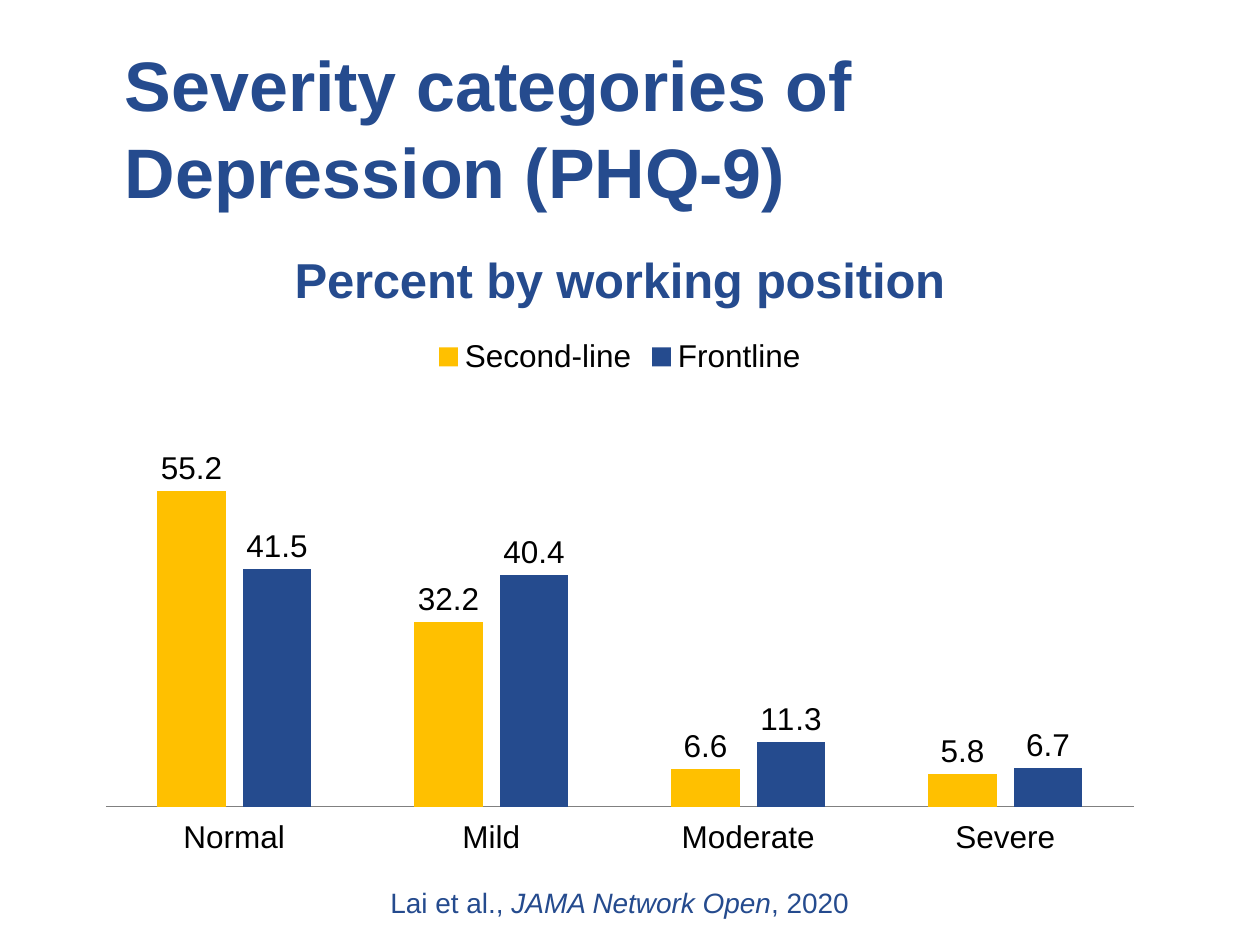
from lxml.etree import SubElement
from pptx import Presentation
from pptx.chart.data import CategoryChartData
from pptx.dml.color import RGBColor
from pptx.enum.chart import XL_CHART_TYPE, XL_LABEL_POSITION, XL_LEGEND_POSITION, XL_TICK_LABEL_POSITION, XL_TICK_MARK
from pptx.enum.text import MSO_ANCHOR, PP_ALIGN
from pptx.oxml.ns import qn
from pptx.util import Cm, Pt

# Content
HEAD = "Severity categories of Depression (PHQ-9)"
NAME = "Percent by working position"
CATS = ["Normal", "Mild", "Moderate", "Severe"]
ROWS = [
    ("Second-line", (55.2, 32.2, 6.6, 5.8), "gold"),
    ("Frontline", (41.5, 40.4, 11.3, 6.7), "blue"),
]
CITE = [("Lai et al., ", False), ("JAMA Network Open", True), (", 2020", False)]
HUES = {"blue": "254B8E", "gold": "FFC000", "black": "000000", "gray": "808080"}
PLOT = {"x": 0.02, "y": 0.02, "w": 0.96, "h": 0.88}


def hue(key):
    return RGBColor.from_string(HUES[key])


def style(font, size, key, bold=False):
    font.name, font.size, font.bold = "Arial", Pt(size), bold
    font.color.rgb = hue(key)


def place(node, box, inner=False):
    """Give a chart part a fixed place, in shares of the chart."""
    layout = node.find(qn("c:layout"))
    if layout is None:
        layout = SubElement(node, qn("c:layout"))
        node.insert(0, layout)
    spot = SubElement(layout, qn("c:manualLayout"))
    if inner:
        SubElement(spot, qn("c:layoutTarget")).set("val", "inner")
    for key in "xy":
        SubElement(spot, qn(f"c:{key}Mode")).set("val", "edge")
    for key, share in box.items():
        SubElement(spot, qn(f"c:{key}")).set("val", str(share))


deck = Presentation()
deck.slide_width, deck.slide_height = Cm(25.4), Cm(19.05)
slide = deck.slides.add_slide(deck.slide_layouts[5])

# Title
title = slide.shapes.title
title.left, title.top, title.width, title.height = Cm(2.26), Cm(0.64), Cm(22.5), Cm(3.18)
frame = title.text_frame
frame.text = HEAD
frame.vertical_anchor = MSO_ANCHOR.TOP
para = frame.paragraphs[0]
para.alignment = PP_ALIGN.LEFT
para.line_spacing = 1.04
style(para.font, 40, "blue", True)

# Chart
data = CategoryChartData()
data.categories = CATS
for label, vals, _ in ROWS:
    data.add_series(label, vals)
chart = slide.shapes.add_chart(
    XL_CHART_TYPE.COLUMN_CLUSTERED, Cm(1.7), Cm(4.45), Cm(21.59), Cm(13.13), data
).chart
style(chart.font, 18, "black")
chart.has_title = True
chart.chart_title.include_in_layout = False
para = chart.chart_title.text_frame.paragraphs[0]
para.text = NAME
style(para.font, 28, "blue", True)
chart.has_legend = True
chart.legend.position = XL_LEGEND_POSITION.TOP
chart.legend.include_in_layout = False

# Bars and their values
plot = chart.plots[0]
plot.vary_by_categories = False
plot.gap_width, plot.overlap = 150, -25
for bar, (_, _, key) in zip(plot.series, ROWS):
    bar.format.fill.solid()
    bar.format.fill.fore_color.rgb = hue(key)
    tags = bar.data_labels
    tags.show_value = True
    tags.position = XL_LABEL_POSITION.OUTSIDE_END
    style(tags.font, 18, "black")
place(chart._chartSpace.chart.plotArea, PLOT, True)

# Axes
axis = chart.category_axis
axis.major_tick_mark = XL_TICK_MARK.NONE
axis.tick_label_position = XL_TICK_LABEL_POSITION.LOW
axis.format.line.color.rgb = hue("gray")
axis.format.line.width = Pt(0.75)
scale = chart.value_axis
scale.minimum_scale, scale.maximum_scale = 0, 100
scale.has_major_gridlines = False
scale.visible = False

# Citation
note = slide.shapes.add_textbox(Cm(7.62), Cm(17.73), Cm(9.96), Cm(1.3))
note.text_frame.word_wrap = True
para = note.text_frame.paragraphs[0]
style(para.font, 16, "blue")
for text, slant in CITE:
    run = para.add_run()
    run.text = text
    run.font.italic = slant

deck.save("out.pptx")
